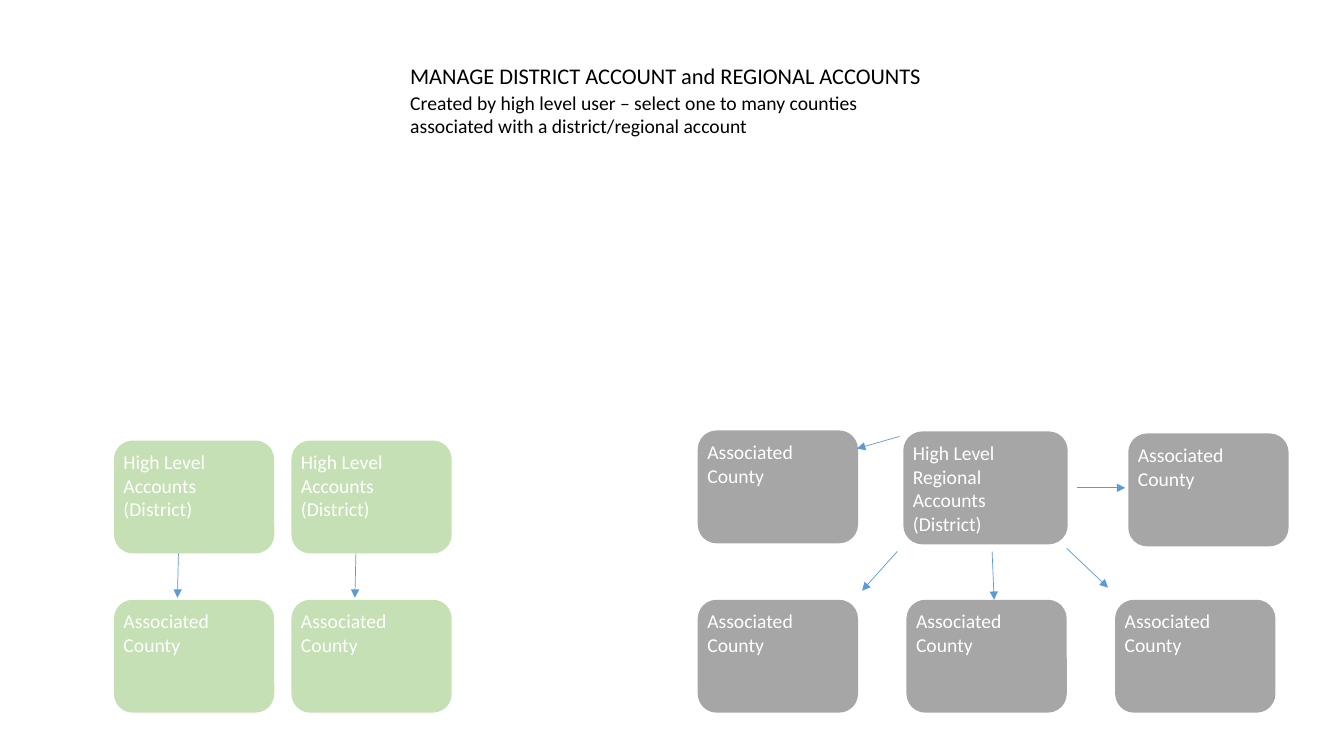
from lxml import etree
from pptx import Presentation
from pptx import util as u
from pptx.dml.color import RGBColor
from pptx.enum import shapes, text
from pptx.oxml.ns import qn

PX = 9144
COLORS = {"black": "000000", "white": "FFFFFF", "district": "C5E0B4",
          "region": "A6A6A6", "arrow": "5B9BD5"}
FONT = "Calibri"
BOX_W, BOX_H = 159, 112
COUNTY = "Associated County"


def px(n):
    return u.Emu(n * PX)


def rgb(name):
    return RGBColor.from_string(COLORS[name])


def write(tf, lines, size=14, color="white", inset=4):
    tf.word_wrap = True
    tf.vertical_anchor = text.MSO_ANCHOR.TOP
    tf.margin_left = tf.margin_right = px(inset)
    for i, line in enumerate(lines):
        p = tf.paragraphs[0] if i == 0 else tf.add_paragraph()
        p.alignment = text.PP_ALIGN.LEFT
        r = p.add_run()
        r.text = line
        r.font.name = FONT
        r.font.size = u.Pt(size)
        r.font.color.rgb = rgb(color)


def add_text(s, x, y, w, h, line, size):
    sp = s.shapes.add_textbox(px(x), px(y), px(w), px(h))
    write(sp.text_frame, [line], size=size, color="black", inset=10)
    sp.text_frame.auto_size = text.MSO_AUTO_SIZE.SHAPE_TO_FIT_TEXT


def add_box(s, x, y, lines, fill, w=BOX_W):
    sp = s.shapes.add_shape(shapes.MSO_SHAPE.ROUNDED_RECTANGLE,
                            px(x), px(y), px(w), px(BOX_H))
    sp.shadow.inherit = False
    sp.adjustments[0] = 0.167
    sp.fill.solid()
    sp.fill.fore_color.rgb = rgb(fill)
    sp.line.fill.background()
    tf = sp.text_frame
    tf.margin_top = tf.margin_bottom = px(4)
    write(tf, lines)


def add_arrow(s, x1, y1, x2, y2):
    c = s.shapes.add_connector(shapes.MSO_CONNECTOR.STRAIGHT,
                               px(x1), px(y1), px(x2), px(y2))
    c.line.color.rgb = rgb("arrow")
    c.line.width = u.Pt(0.5)
    etree.SubElement(c.line._get_or_add_ln(), qn("a:tailEnd"), type="triangle")
    etree.SubElement(c._element.spPr, qn("a:effectLst"))


def add_heading(s, x, y):
    add_text(s, x, y, 1100, 37,
             "MANAGE DISTRICT ACCOUNT and REGIONAL ACCOUNTS", 16)
    add_text(s, x, y + 28, 499, 57,
             "Created by high level user – select one to many counties "
             "associated with a district/regional account", 14)


def add_district(s, x, y):
    add_box(s, x, y, ["High Level Accounts", "(District)"], "district")
    add_box(s, x, y + 158, [COUNTY], "district")
    add_arrow(s, x + 64, y + BOX_H, x + 63, y + 156)


def add_region(s, x, y):
    add_box(s, x + 204, y + 1, ["High Level Regional Accounts", "(District)"],
            "region", w=163)
    for dx, dy in [(0, 0), (427, 3)] + [(207 * i, 168) for i in range(3)]:
        add_box(s, x + dx, y + dy, [COUNTY], "region")
    for x1, y1, x2, y2 in [(200, 6, 158, 18), (376, 57, 424, 57),
                           (198, 120, 163, 159), (292, 120, 294, 168),
                           (366, 117, 407, 156)]:
        add_arrow(s, x + x1, y + y1, x + x2, y + y2)


def main():
    prs = Presentation()
    prs.slide_width, prs.slide_height = px(1333), px(750)
    s = prs.slides.add_slide(prs.slide_layouts[6])
    add_heading(s, 397, 57)
    for i in range(2):
        add_district(s, 113 + 176 * i, 437)
    add_region(s, 692, 427)
    prs.save("out.pptx")


if __name__ == "__main__":
    main()
